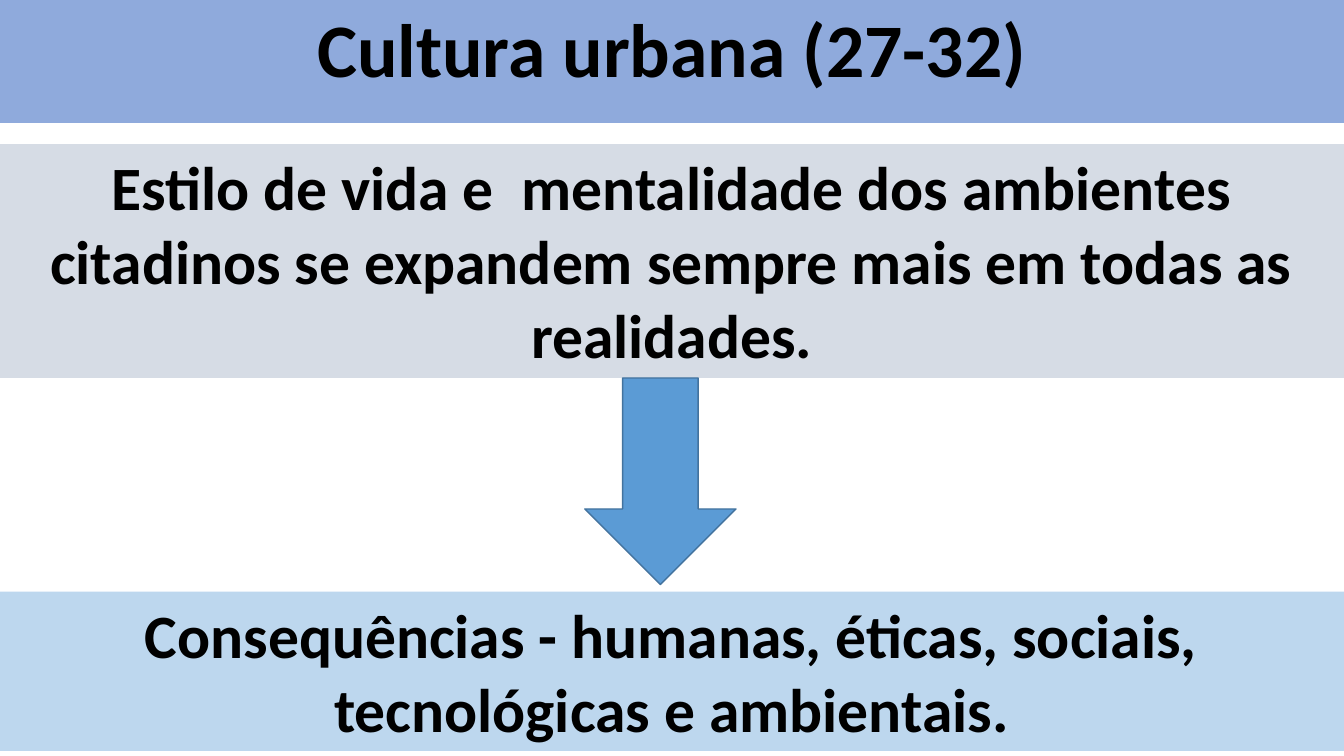
from dataclasses import dataclass

from pptx import Presentation
from pptx.dml.color import RGBColor
from pptx.enum.shapes import MSO_SHAPE as Shape
from pptx.enum.text import MSO_ANCHOR as Anchor, MSO_AUTO_SIZE as Fit, PP_ALIGN as Align
from pptx.util import Inches, Pt

WIDE, HIGH = Inches(13.33), Inches(7.5)
ROW = HIGH / 100  # heights and tops are in hundredths of the slide
COL = WIDE / 100
COLORS = {
    "title": "8FAADC",
    "style": "D6DCE5",
    "effect": "BDD7EE",
    "arrow": "5B9BD5",
    "edge": "43739E",
    "text": "000000",
}


@dataclass
class Band:
    """A strip of text across the whole slide."""
    text: str
    top: float
    tall: float
    color: str
    size: int = 44
    fit: Fit = Fit.SHAPE_TO_FIT_TEXT


TITLE = Band("Cultura urbana (27-32)", -0.4, 16.67, "title", 54, Fit.NONE)
BANDS = [
    Band("Estilo de vida e  mentalidade dos ambientes citadinos se expandem "
         "sempre mais em todas as realidades.", 19.07, 30.93, "style"),
    Band("Consequências - humanas, éticas, sociais, tecnológicas e ambientais.",
         78.27, 21.07, "effect"),
]


def rgb(name: str) -> RGBColor:
    return RGBColor.from_string(COLORS[name])


def place(shape, left: float, top: float, wide: float, tall: float) -> None:
    shape.left, shape.top = round(left * COL), round(top * ROW)
    shape.width, shape.height = round(wide * COL), round(tall * ROW)


def paint(shape, color: str) -> None:
    shape.fill.solid()
    shape.fill.fore_color.rgb = rgb(color)


def write(shape, text: str, *, size: int, fit: Fit, bold: bool = True,
          color: str = "text", face: str = "Calibri") -> None:
    frame = shape.text_frame
    frame.word_wrap = True
    frame.auto_size = fit
    frame.vertical_anchor = Anchor.TOP
    para = frame.paragraphs[0]
    para.alignment = Align.CENTER
    run = para.add_run()
    run.text = text
    font = run.font
    font.name, font.size, font.bold = face, Pt(size), bold
    font.color.rgb = rgb(color)


def fill_band(shape, band: Band) -> None:
    place(shape, 0, band.top, 100, band.tall)
    paint(shape, band.color)
    write(shape, band.text, size=band.size, fit=band.fit)


def draw_arrow(slide) -> None:
    arrow = slide.shapes.add_shape(Shape.DOWN_ARROW, 0, 0, 0, 0)
    place(arrow, 43.51, 50, 11.25, 27.33)
    arrow.shadow.inherit = False
    paint(arrow, "arrow")
    arrow.line.color.rgb = rgb("edge")
    arrow.line.width = Pt(1)


def main() -> None:
    deck = Presentation()
    deck.slide_width, deck.slide_height = WIDE, HIGH
    slide = deck.slides.add_slide(deck.slide_layouts[5])
    fill_band(slide.shapes.title, TITLE)
    for band in BANDS:
        fill_band(slide.shapes.add_textbox(0, 0, 0, 0), band)
    draw_arrow(slide)
    deck.save("out.pptx")


if __name__ == "__main__":
    main()
